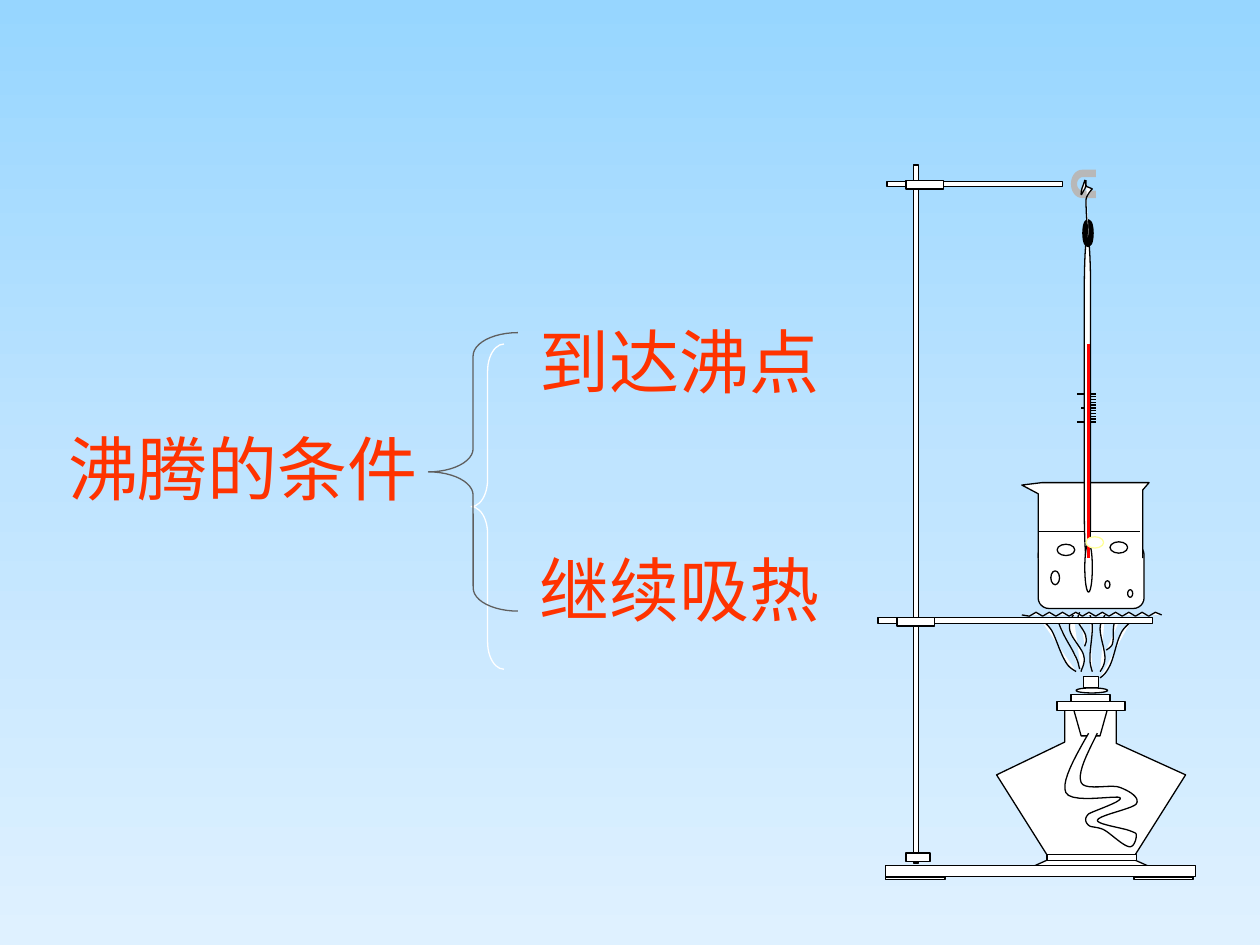
from copy import deepcopy
from dataclasses import dataclass

from lxml.etree import SubElement
from pptx import Presentation
from pptx.dml.color import RGBColor as Color
from pptx.enum.shapes import MSO_CONNECTOR as Connector
from pptx.enum.shapes import MSO_SHAPE as Preset
from pptx.enum.text import MSO_ANCHOR as Anchor
from pptx.enum.text import MSO_AUTO_SIZE as AutoSize
from pptx.enum.text import PP_ALIGN as Align
from pptx.oxml.ns import qn
from pptx.util import Pt

Point = tuple[float, float]


@dataclass(frozen=True)
class Theme:
    """Colours, font and sizes of the slide."""
    sky: tuple = ((0, "97D6FF"), (0.5, "BFE4FF"), (1, "DFF1FF"))
    text: str = "FF3300"
    ink: str = "000000"
    paper: str = "FFFFFF"
    metal: str = "B8B8B8"
    brace: str = "5F5F5F"
    glow: str = "FFFF99"
    mercury: str = "FF0000"
    font: str = "Arial"
    size: float = 40
    thin: float = 0.75
    bold: float = 1.5
    heavy: float = 3


THEME = Theme()


@dataclass(frozen=True)
class Part:
    """A preset shape with its box in points."""
    left: float
    top: float
    width: float
    height: float
    preset: Preset = Preset.RECTANGLE
    fill: str | None = THEME.paper
    line: str | None = THEME.ink
    weight: float = THEME.thin
    rotation: float = 0
    bend: float | None = None


@dataclass(frozen=True)
class Outline:
    """A freeform through points."""
    points: list[Point]
    closed: bool = True
    fill: str = THEME.paper
    line: str | None = THEME.ink


@dataclass(frozen=True)
class Stroke:
    """A straight line between two points."""
    start: Point
    end: Point
    color: str = THEME.ink
    weight: float = THEME.thin


def curve(*points: Point, steps: int = 10) -> list[Point]:
    """Sample a chain of cubic Bezier segments."""
    samples = [points[0]]
    for first in range(0, len(points) - 1, 3):
        a, b, c, d = points[first:first + 4]
        for step in range(1, steps + 1):
            t = step / steps
            u = 1 - t
            samples.append(tuple(
                u**3 * a[i] + 3 * u * u * t * b[i] + 3 * u * t * t * c[i] + t**3 * d[i]
                for i in (0, 1)))
    return samples


def ellipse(left: float, top: float, width: float, height: float, **look) -> Part:
    """Describe an ellipse."""
    return Part(left, top, width, height, Preset.OVAL, **look)


def paint(shape, fill: str | None, line: str | None, weight: float) -> None:
    """Set fill, line and shadow of a shape."""
    shape.shadow.inherit = False
    if fill:
        shape.fill.solid()
        shape.fill.fore_color.rgb = Color.from_string(fill)
    else:
        shape.fill.background()
    if line:
        shape.line.color.rgb = Color.from_string(line)
        shape.line.width = Pt(weight)
    else:
        shape.line.fill.background()


def draw(slide, item: Part | Outline | Stroke) -> None:
    """Draw one element of the apparatus."""
    shapes = slide.shapes
    if isinstance(item, Part):
        shape = shapes.add_shape(item.preset, Pt(item.left), Pt(item.top),
                                 Pt(item.width), Pt(item.height))
        shape.rotation = item.rotation
        if item.bend is not None:
            shape.adjustments[0] = item.bend
        paint(shape, item.fill, item.line, item.weight)
    elif isinstance(item, Outline):
        points = [(Pt(x), Pt(y)) for x, y in item.points]
        builder = shapes.build_freeform(*points[0])
        builder.add_line_segments(points[1:], close=item.closed)
        paint(builder.convert_to_shape(), item.fill, item.line, THEME.thin)
    else:
        line = shapes.add_connector(Connector.STRAIGHT, *map(Pt, item.start + item.end))
        line.line.color.rgb = Color.from_string(item.color)
        line.line.width = Pt(item.weight)
        SubElement(line._element.spPr, qn("a:effectLst"))


def write(shape, text: str, *, left: float, top: float, width: float, height: float,
          size: float = THEME.size, color: str = THEME.text, font: str = THEME.font) -> None:
    """Place a placeholder and fill it with formatted text."""
    shape.left, shape.top, shape.width, shape.height = map(Pt, (left, top, width, height))
    frame = shape.text_frame
    frame.text = text
    frame.word_wrap = True
    frame.auto_size = AutoSize.NONE
    frame.vertical_anchor = Anchor.TOP
    paragraph = frame.paragraphs[0]
    paragraph.alignment = Align.LEFT
    paragraph.space_before = Pt(0)
    properties = paragraph._p.get_or_add_pPr()
    properties.set("marL", "0")
    properties.set("indent", "0")
    SubElement(properties, qn("a:buNone"))
    style = paragraph.runs[0].font
    style.name, style.size = font, Pt(size)
    style.color.rgb = Color.from_string(color)


def paint_sky(slide) -> None:
    """Give the slide its vertical gradient."""
    fill = slide.background.fill
    fill.gradient()
    fill.gradient_angle = 270
    stops = next(slide.element.iter(qn("a:gsLst")))
    stops.insert(1, deepcopy(stops[0]))
    for stop, (position, color) in zip(fill.gradient_stops, THEME.sky):
        stop.position = position
        stop.color.rgb = Color.from_string(color)


def beaker() -> list:
    """Describe the beaker of water."""
    return [
        Part(593.3, 311, 60.5, 36.7, Preset.FLOWCHART_ALTERNATE_PROCESS),
        Outline([(593.3, 319), (593.3, 282.2), (583.9, 277.2), (595.4, 275.8),
                 (656.6, 275.8), (653, 280), (653, 319)], closed=False),
        Part(594.7, 306.7, 56.9, 38.2, line=None),
        Stroke((593.3, 303.8), (651.6, 303.8)),
        ellipse(634.3, 309.6, 10.1, 6.5)]


def lamp() -> list:
    """Describe the spirit lamp and its wick."""
    wick = curve(
        (627.1, 419), (621.4, 430.6), (615.6, 441.4), (617.8, 447.1),
        (619.9, 452.2), (635, 447.8), (640.1, 450), (645.8, 452.2), (651.6, 455.8), (649.4, 459.4),
        (647.3, 462.2), (627.8, 465.8), (627.1, 468.7), (626.4, 470.9), (640.8, 473), (645.1, 474.5),
        (648.7, 475.9), (649.4, 475.9), (649.4, 477.4), (649.4, 479.5), (648, 484.6), (645.1, 483.8),
        (641.5, 483.1), (635, 476.6), (631.4, 474.5), (627.8, 472.3), (623.5, 473), (622.1, 471.6),
        (620.6, 470.2), (619.2, 468), (622.1, 465.1), (625.7, 463), (642.2, 457.9), (640.1, 455.8),
        (637.9, 454.3), (612, 459.4), (609.1, 452.9), (606.2, 447.1), (614.2, 432.7), (622.1, 419))
    return [
        Outline([(599, 489.6), (569.5, 442.8), (608.4, 424.1), (608.4, 405.4),
                 (637.9, 405.4), (637.9, 424.8), (677.5, 442.8), (648, 489.6)]),
        Outline([(612.7, 402.5), (617.8, 420.5), (628.6, 420.5), (633.6, 402.5)]),
        ellipse(614.9, 393.1, 18, 2.9),
        Part(619.2, 386.6, 8.6, 6.5),
        Outline(wick, closed=False),
        Part(612, 396.7, 22.3, 5.8),
        Part(604.1, 401, 38.9, 5),
        Outline([(589.7, 495.4), (602.6, 489.6), (644.4, 489.6), (657.4, 495.4)]),
        Part(598.3, 488.2, 51.1, 3.6)]


def flames() -> list:
    """Describe the tongues of the flame."""
    tongues = (
        ((613.4, 351.4), (612, 353.5), (610.6, 356.4), (611.3, 360), (612, 364.3),
         (618.5, 370.8), (619.2, 374.4), (620.6, 378.7), (617.8, 382.3), (617.8, 383.8)),
        ((624.2, 383.8), (623.5, 381.6), (622.8, 379.4), (622.8, 375.8), (622.8, 371.5),
         (624.2, 363.6), (624.2, 359.3), (624.2, 355.7), (623.5, 352.8), (622.8, 351.4)),
        ((617, 382.3), (616.3, 380.2), (616.3, 378), (614.2, 374.4), (612.7, 370.8),
         (608.4, 364.3), (607, 360.7), (604.8, 356.4), (604.8, 354.2), (604.1, 352.8)),
        ((628.6, 383.8), (630, 381.6), (631.4, 379.4), (631.4, 375.8), (631.4, 371.5),
         (628.6, 363.6), (628.6, 359.3), (628.6, 355.7), (630.7, 352.8), (631.4, 351.4)),
        ((614.9, 383.8), (612.7, 382.3), (610.6, 381.6), (608.4, 377.3), (606.2, 373.7),
         (603.4, 365), (601.2, 360.7), (599, 357.1), (596.2, 355), (594.7, 354.2)),
        ((628.6, 387.4), (630.7, 385.9), (632.2, 384.5), (634.3, 380.2), (636.5, 375.8),
         (637.9, 367.2), (640.1, 362.9), (641.5, 359.3), (644.4, 357.1), (645.8, 355.7)),
        ((617, 349.9), (616.3, 351.4), (615.6, 352.8), (616.3, 355.7), (617, 357.8),
         (620.6, 361.4), (620.6, 364.3), (621.4, 366.5), (619.9, 368.6), (619.9, 369.4)),
        ((640.1, 353.5), (638.6, 354.2), (636.5, 355), (636.5, 357.1), (635.8, 360),
         (636.5, 365), (635.8, 367.2), (635.8, 369.4), (632.9, 370.8), (632.2, 371.5)))
    return [Outline(curve(*tongue), closed=False) for tongue in tongues]


def thermometer() -> list:
    """Describe the thermometer with its scale."""
    starts = {0: 615.4, 5: 618, 10: 615.4}
    ticks = [Stroke((starts.get(i, 621), 225.1 + 1.6 * i), (626.3, 225.1 + 1.6 * i),
                    weight=THEME.bold if i in starts else THEME.thin) for i in range(11)]
    return ticks + [
        Part(527.8, 226.8, 187.2, 3.6, Preset.FLOWCHART_TERMINATOR, rotation=270),
        ellipse(619.9, 126.7, 3.6, 13, weight=THEME.heavy),
        ellipse(619.9, 310.3, 4.3, 28.1),
        Stroke((622.1, 196.6), (622.1, 319), THEME.mercury, THEME.bold)]


def stand() -> list:
    """Describe the iron stand, its hook, gauze and thread."""
    jaw = [(626.3, 97), *curve((618.5, 97), (614.5, 97), (612, 101), (612, 105.1)),
           *curve((615.5, 105.1), (615.5, 103), (617, 101.2), (619, 101.2)), (626.3, 101.2)]
    gauze = [(588.2 + 72 / 19 * i, 349.9 if i % 2 else 352.1) for i in range(20)]
    thread = curve(
        (620.6, 103), (620.6, 104.4), (620.6, 106.6), (619.9, 108), (619.2, 108.7), (617.8, 112.3),
        (617.8, 110.9), (617.8, 108), (619.2, 105.8), (619.9, 103), (621.4, 108), (619.9, 105.8),
        (624.2, 108), (622.8, 109.4), (620.6, 112.3), (620.6, 114.5), (620.6, 122.4),
        (621.4, 130.3), (622.1, 138.2), (622.1, 139), (622.1, 135.4), (622.1, 134.6))
    return [
        Part(522, 94.3, 2.9, 398.9), Part(517.7, 487.4, 13.7, 5), Part(506.2, 494.6, 177.1, 6.5),
        Part(506.9, 103.7, 100.1, 2.9), Part(517.7, 103, 21.6, 5),
        Outline(jaw, fill=THEME.metal, line=None),
        Outline([(x, 210.2 - y) for x, y in jaw], fill=THEME.metal, line=None),
        Part(501.8, 352.8, 157, 3.6), Part(512.6, 352.8, 21.6, 5),
        Outline([(583.9, 351.4), *gauze, (663.8, 351.4)], closed=False),
        Part(506.2, 501.1, 33.8, 1.4), Part(648, 501.1, 33.8, 1.4),
        Outline(thread, closed=False)]


def bubbles() -> list:
    """Describe the bubbles in the water."""
    return [ellipse(600.5, 326.2, 5, 7.9), ellipse(604.1, 311, 10.1, 6.5),
            ellipse(620.6, 306.7, 10.1, 6.5, line=THEME.glow),
            ellipse(631.4, 331.9, 2.9, 4.3), ellipse(644.4, 337, 2.9, 4.3)]


def main() -> None:
    """Build and save the slide."""
    presentation = Presentation()
    presentation.slide_width, presentation.slide_height = Pt(720), Pt(540)
    slide = presentation.slides.add_slide(presentation.slide_layouts[3])
    paint_sky(slide)
    title, first, second = slide.placeholders
    write(title, "沸腾的条件", left=31.7, top=239.8, width=269.3, height=60.5)
    for shape, text, top in ((first, "到达沸点", 178.6), (second, "继续吸热", 308.9)):
        write(shape, text, left=301, top=top, width=193, height=55.4)
    braces = [Part(269.3, 196.6, 18.7, 185.8, Preset.LEFT_BRACE, None, THEME.paper, bend=0.83),
              Part(244.8, 190.1, 51.1, 159.1, Preset.LEFT_BRACE, None, THEME.brace, bend=0.26)]
    for item in (braces[:1] + beaker() + lamp() + flames() + thermometer()
                 + stand() + bubbles() + braces[1:]):
        draw(slide, item)
    presentation.save("out.pptx")


if __name__ == "__main__":
    main()
